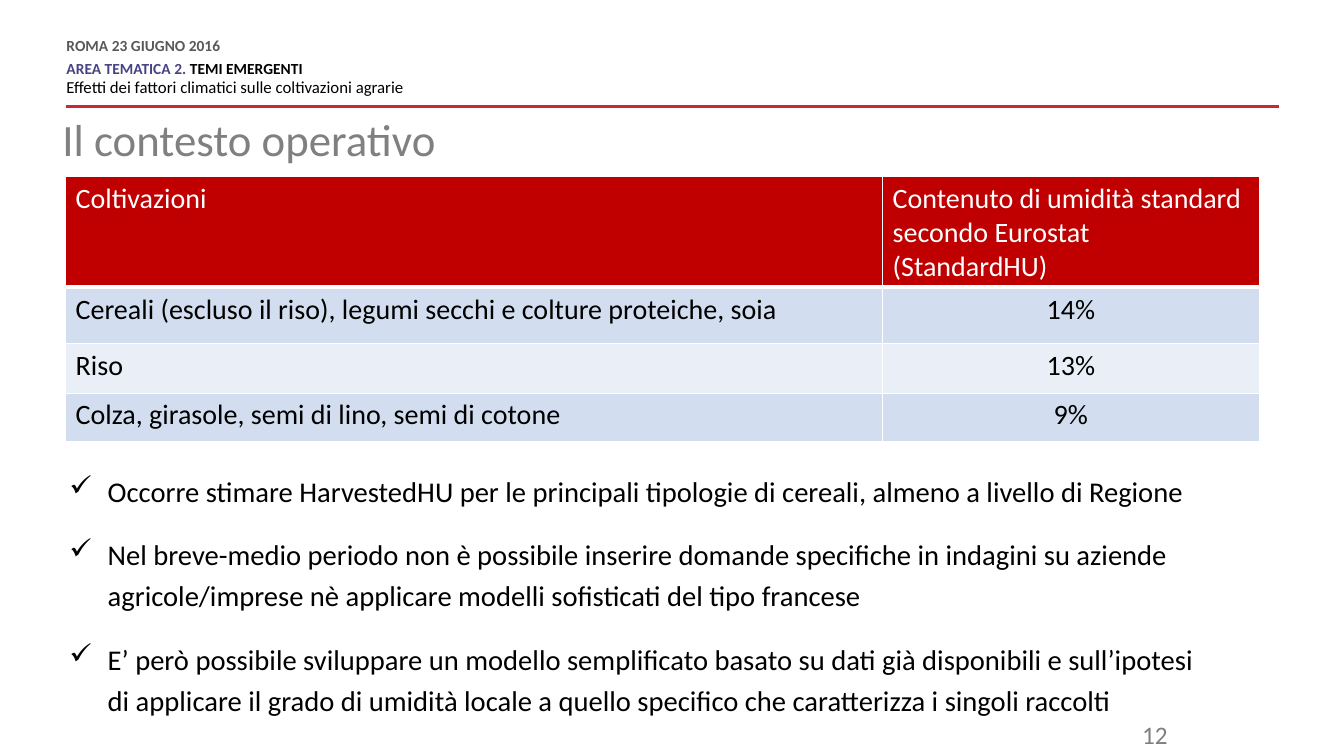
from dataclasses import dataclass

from lxml.etree import SubElement
from pptx import Presentation
from pptx.dml.color import RGBColor as Color
from pptx.enum.shapes import MSO_CONNECTOR as Connector
from pptx.enum.text import MSO_ANCHOR as Anchor, MSO_AUTO_SIZE as AutoSize, PP_ALIGN as Align
from pptx.oxml.ns import qn
from pptx.util import Inches, Pt


@dataclass(frozen=True)
class Theme:
    """Colours and type sizes of the slide."""
    font: str = "Calibri"
    rule: str = "C72A31"
    place: str = "595959"
    area: str = "484384"
    text: str = "000000"
    title: str = "808080"
    number: str = "7F7F7F"
    white: str = "FFFFFF"
    head_fill: str = "C00000"
    bands: tuple = ("D2DEEF", "EAEFF7")
    small: float = 11
    subtitle: float = 12
    heading: float = 32
    cell: float = 20
    body: float = 20.4
    page: float = 18


THEME = Theme()
WIDTH, HEIGHT = Inches(13.33), Inches(7.5)
TITLE = "Il contesto operativo"
HEADER = [
    ([("ROMA 23 GIUGNO 2016", THEME.place)], THEME.small, True, {"space_after": Pt(6)}),
    ([("AREA TEMATICA 2. ", THEME.area), ("TEMI EMERGENTI", THEME.text)], THEME.small, True, {}),
    ([("Effetti dei fattori climatici sulle coltivazioni agrarie", THEME.text)],
     THEME.subtitle, False, {"space_before": Pt(3), "space_after": Pt(6)}),
]
MOISTURE = [
    ("Coltivazioni", "Contenuto di umidità standard secondo Eurostat (StandardHU)"),
    ("Cereali (escluso il riso), legumi secchi e colture proteiche, soia", "14%"),
    ("Riso", "13%"),
    ("Colza, girasole, semi di lino, semi di cotone", "9%"),
]
COLUMN_SHARES = (68.44, 31.56)
ROW_SHARES = (32.32, 21.29, 18.63, 18.25)
POINTS = [
    "Occorre stimare HarvestedHU per le principali tipologie di cereali, almeno a livello di Regione",
    "Nel breve-medio periodo non è possibile inserire domande specifiche in indagini su aziende "
    "agricole/imprese nè applicare modelli sofisticati del tipo francese",
    "E’ però possibile sviluppare un modello semplificato basato su dati già disponibili e "
    "sull’ipotesi di applicare il grado di umidità locale a quello specifico che caratterizza i "
    "singoli raccolti",
]


def share(percent, length):
    """Return a percentage of a length."""
    return int(length * percent / 100)


def area(left, top, width, height):
    """Turn percentages of the slide into a box."""
    return share(left, WIDTH), share(top, HEIGHT), share(width, WIDTH), share(height, HEIGHT)


def apply(target, formats):
    """Set each attribute named in a dict of formats."""
    for name, value in formats.items():
        setattr(target, name, value)


def write(paragraph, text, size, color, bold=False):
    """Add one formatted run to a paragraph."""
    run = paragraph.add_run()
    run.text = text
    apply(run.font, {"name": THEME.font, "size": Pt(size), "bold": bold})
    run.font.color.rgb = Color.from_string(color)


def set_frame(frame, inset=None, auto_size=AutoSize.NONE):
    """Wrap a text frame, anchor it at the top and set its insets."""
    apply(frame, {"word_wrap": True, "vertical_anchor": Anchor.TOP, "auto_size": auto_size})
    if inset is not None:
        sides = ("left", "top", "right", "bottom")
        apply(frame, {f"margin_{side}": inset for side in sides})


def add_text_frame(slide, box, **options):
    """Add a text box and return its frame."""
    frame = slide.shapes.add_textbox(*box).text_frame
    set_frame(frame, **options)
    return frame


def next_paragraph(frame, index):
    """Return the first paragraph of a frame or a new one."""
    return frame.add_paragraph() if index else frame.paragraphs[0]


def add_rule(slide, box):
    """Draw the red line along the top of its box."""
    left, top, width, _ = box
    line = slide.shapes.add_connector(Connector.STRAIGHT, left + width, top, left, top)
    line.line.color.rgb = Color.from_string(THEME.rule)
    line.line.width = Pt(2)
    SubElement(line._element.spPr, qn("a:effectLst"))


def add_header(slide, box):
    """Write the event, area and subject lines."""
    frame = add_text_frame(slide, box, inset=0, auto_size=AutoSize.SHAPE_TO_FIT_TEXT)
    for index, (runs, size, bold, spacing) in enumerate(HEADER):
        paragraph = next_paragraph(frame, index)
        apply(paragraph, {"line_spacing": Pt(10.8), **spacing})
        for text, color in runs:
            write(paragraph, text, size, color, bold)


def add_title(slide, box):
    """Place and format the title placeholder."""
    title = slide.shapes.title
    apply(title, dict(zip(("left", "top", "width", "height"), box)))
    set_frame(title.text_frame, inset=0)
    paragraph = title.text_frame.paragraphs[0]
    apply(paragraph, {"alignment": Align.LEFT, "line_spacing": 0.9})
    write(paragraph, TITLE, THEME.heading, THEME.title)


def set_borders(cell, bottom):
    """Draw the white borders of a cell."""
    properties = cell._tc.get_or_add_tcPr()
    for position, (side, points) in enumerate(zip("LRTB", (1, 1, 1, bottom))):
        line = properties.makeelement(qn(f"a:ln{side}"), {"w": str(Pt(points))})
        fill = SubElement(line, qn("a:solidFill"))
        SubElement(fill, qn("a:srgbClr"), val=THEME.white)
        properties.insert(position, line)


def add_moisture_table(slide, box):
    """Build the table of standard moisture by crop."""
    frame = slide.shapes.add_table(len(MOISTURE), len(COLUMN_SHARES), *box)
    table = frame.table
    for column, percent in zip(table.columns, COLUMN_SHARES):
        column.width = share(percent, box[2])
    for row, percent in zip(table.rows, ROW_SHARES):
        row.height = share(percent, box[3])
    frame.height = box[3]
    for row_index, texts in enumerate(MOISTURE):
        is_head = row_index == 0
        fill = THEME.head_fill if is_head else THEME.bands[(row_index - 1) % 2]
        for column_index, text in enumerate(texts):
            cell = table.cell(row_index, column_index)
            cell.fill.solid()
            cell.fill.fore_color.rgb = Color.from_string(fill)
            set_borders(cell, 3 if is_head else 1)
            paragraph = cell.text_frame.paragraphs[0]
            paragraph.alignment = Align.CENTER if column_index and not is_head else Align.LEFT
            write(paragraph, text, THEME.cell, THEME.white if is_head else THEME.text)


def add_points(slide, box):
    """Write the ticked list."""
    frame = add_text_frame(slide, box)
    for index, text in enumerate(POINTS):
        paragraph = next_paragraph(frame, index)
        apply(paragraph, {"line_spacing": 1.2, "space_after": Pt(6),
                          "space_before": Pt(10 if index else 0)})
        properties = paragraph._p.get_or_add_pPr()
        properties.set("marL", str(Inches(0.38)))
        properties.set("indent", str(Inches(-0.38)))
        SubElement(properties, qn("a:buChar"), char="✓")
        write(paragraph, text, THEME.body, THEME.text)


def add_page_number(slide, box):
    """Write the page number at the right of its box."""
    paragraph = add_text_frame(slide, box).paragraphs[0]
    paragraph.alignment = Align.RIGHT
    write(paragraph, "12", THEME.page, THEME.number)


def main():
    """Build and save the presentation."""
    presentation = Presentation()
    apply(presentation, {"slide_width": WIDTH, "slide_height": HEIGHT})
    slide = presentation.slides.add_slide(presentation.slide_layouts[5])
    add_rule(slide, area(4.95, 14.13, 90.25, 0))
    add_header(slide, area(4.95, 5.2, 62.56, 7.87))
    add_page_number(slide, area(78.77, 94.53, 8.85, 4.67))
    add_title(slide, area(4.65, 15.6, 87.77, 10.8))
    add_moisture_table(slide, area(4.88, 23.33, 88.82, 35.07))
    add_points(slide, area(4.43, 61.07, 86.2, 41.73))
    presentation.save("out.pptx")


if __name__ == "__main__":
    main()
